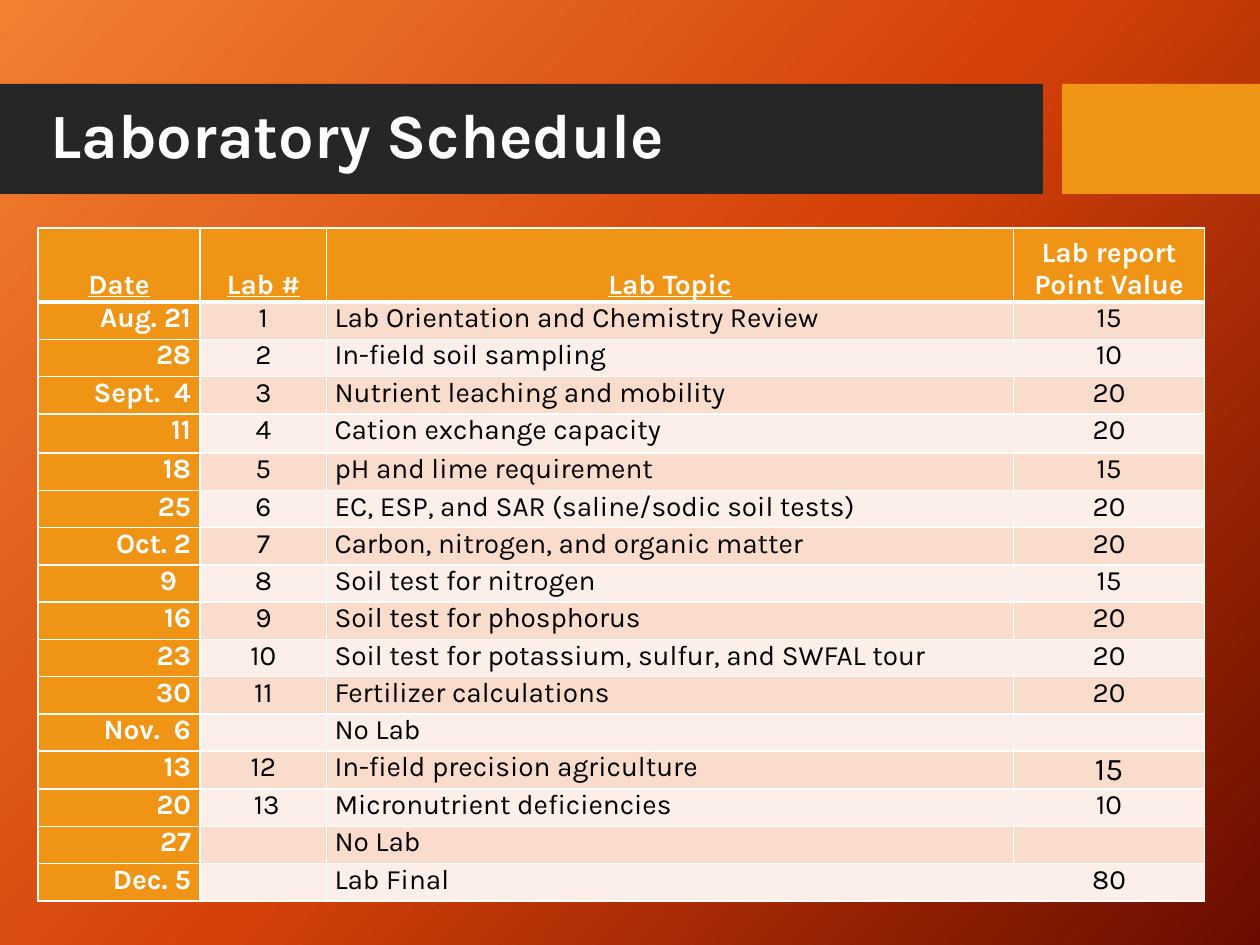
"""Build the Laboratory Schedule slide: a title band over a table of weekly labs."""
from copy import deepcopy

from lxml.etree import SubElement
from pptx import Presentation
from pptx.dml.color import RGBColor
from pptx.enum.shapes import MSO_SHAPE as Shape
from pptx.enum.text import MSO_ANCHOR as Anchor, PP_ALIGN as Align
from pptx.oxml.ns import qn
from pptx.util import Pt

COLORS = {
    "glow": "F18031", "flame": "D54209", "ember": "6A0D00",
    "band": "262626", "accent": "F09415", "odd": "F9DCCC", "even": "FCEEE8",
    "white": "FFFFFF", "black": "000000",
}
HEADINGS = ["Date", "Lab #", "Lab Topic", "Lab report Point Value"]
LABS = [
    ("Aug. 21", "1", "Lab Orientation and Chemistry Review", "15"),
    ("28", "2", "In-field soil sampling", "10"),
    ("Sept.  4", "3", "Nutrient leaching and mobility", "20"),
    ("11", "4", "Cation exchange capacity", "20"),
    ("18", "5", "pH and lime requirement", "15"),
    ("25", "6", "EC, ESP, and SAR (saline/sodic soil tests)", "20"),
    ("Oct. 2", "7", "Carbon, nitrogen, and organic matter", "20"),
    ("9", "8", "Soil test for nitrogen", "15"),
    ("16", "9", "Soil test for phosphorus", "20"),
    ("23", "10", "Soil test for potassium, sulfur, and SWFAL tour", "20"),
    ("30", "11", "Fertilizer calculations", "20"),
    ("Nov.  6", "", "No Lab", ""),
    ("13", "12", "In-field precision agriculture", "15"),
    ("20", "13", "Micronutrient deficiencies", "10"),
    ("27", "", "No Lab", ""),
    ("Dec. 5", "", "Lab Final", "80"),
]
COLUMN_WIDTHS = [92.6, 72.4, 392.4, 109.3]
ALIGNMENTS = [Align.RIGHT, Align.CENTER, Align.LEFT, Align.CENTER]


def style_text(paragraph, size, color, bold, align):
    paragraph.alignment = align
    font = paragraph.font
    font.name, font.size, font.bold = "Karla", Pt(size), bold
    font.color.rgb = RGBColor.from_string(COLORS[color])


def add_borders(cell, bottom):
    properties = cell._tc.get_or_add_tcPr()
    for position, (side, width) in enumerate(
        [("lnL", 1), ("lnR", 1), ("lnT", 1), ("lnB", bottom)]
    ):
        line = SubElement(properties, qn(f"a:{side}"), w=str(Pt(width)))
        paint = SubElement(line, qn("a:solidFill"))
        SubElement(paint, qn("a:srgbClr"), val=COLORS["white"])
        properties.insert(position, line)


deck = Presentation()
deck.slide_width, deck.slide_height = Pt(720), Pt(540)
slide = deck.slides.add_slide(deck.slide_layouts[6])

backdrop = slide.background.fill
backdrop.gradient()
backdrop.gradient_angle = 318
stop_list = next(slide.element.iter(qn("a:gsLst")))
stop_list.append(deepcopy(stop_list[0]))
for stop, place, name in zip(
    backdrop.gradient_stops, [0, 0.5, 1], ["glow", "flame", "ember"]
):
    stop.position = place
    stop.color.rgb = RGBColor.from_string(COLORS[name])

for left, width, name in [(0, 596, "band"), (607, 113, "accent")]:
    bar = slide.shapes.add_shape(Shape.RECTANGLE, Pt(left), Pt(48), Pt(width), Pt(62.8))
    bar.shadow.inherit = False
    bar.fill.solid()
    bar.fill.fore_color.rgb = RGBColor.from_string(COLORS[name])
    bar.line.fill.background()

title = slide.shapes.add_textbox(Pt(21.6), Pt(56.9), Pt(543), Pt(44.6)).text_frame
title.word_wrap = True
title.vertical_anchor = Anchor.MIDDLE
title.text = "Laboratory Schedule"
title.paragraphs[0].line_spacing = 0.9
style_text(title.paragraphs[0], 36, "white", True, Align.LEFT)

schedule = slide.shapes.add_table(
    len(LABS) + 1, len(HEADINGS), Pt(21.7), Pt(130.3), Pt(666.7), Pt(384.3)
).table
for column, width in zip(schedule.columns, COLUMN_WIDTHS):
    column.width = Pt(width)

for row, entries in enumerate([HEADINGS, *LABS]):
    header = row == 0
    schedule.rows[row].height = Pt({0: 42.3, 4: 22.5}.get(row, 21.3))
    for column, entry in enumerate(entries):
        cell = schedule.cell(row, column)
        accented = header or column == 0
        cell.text = entry
        cell.margin_left = cell.margin_right = Pt(4.5 if header or column else 5.2)
        cell.margin_top = cell.margin_bottom = 0
        cell.vertical_anchor = Anchor.BOTTOM if header else Anchor.TOP
        cell.fill.solid()
        fill = "accent" if accented else "odd" if row % 2 else "even"
        cell.fill.fore_color.rgb = RGBColor.from_string(COLORS[fill])
        add_borders(cell, 3 if header else 1)
        style_text(
            cell.text_frame.paragraphs[0], 16, "white" if accented else "black",
            accented, Align.CENTER if header else ALIGNMENTS[column],
        )
        if header and column < 3:
            cell.text_frame.paragraphs[0].font.underline = True

schedule.cell(8, 0).margin_right = Pt(13.2)
schedule.cell(14, 1).margin_left = Pt(8.5)
schedule.cell(13, 3).text_frame.paragraphs[0].font.size = Pt(18)

deck.save("out.pptx")
